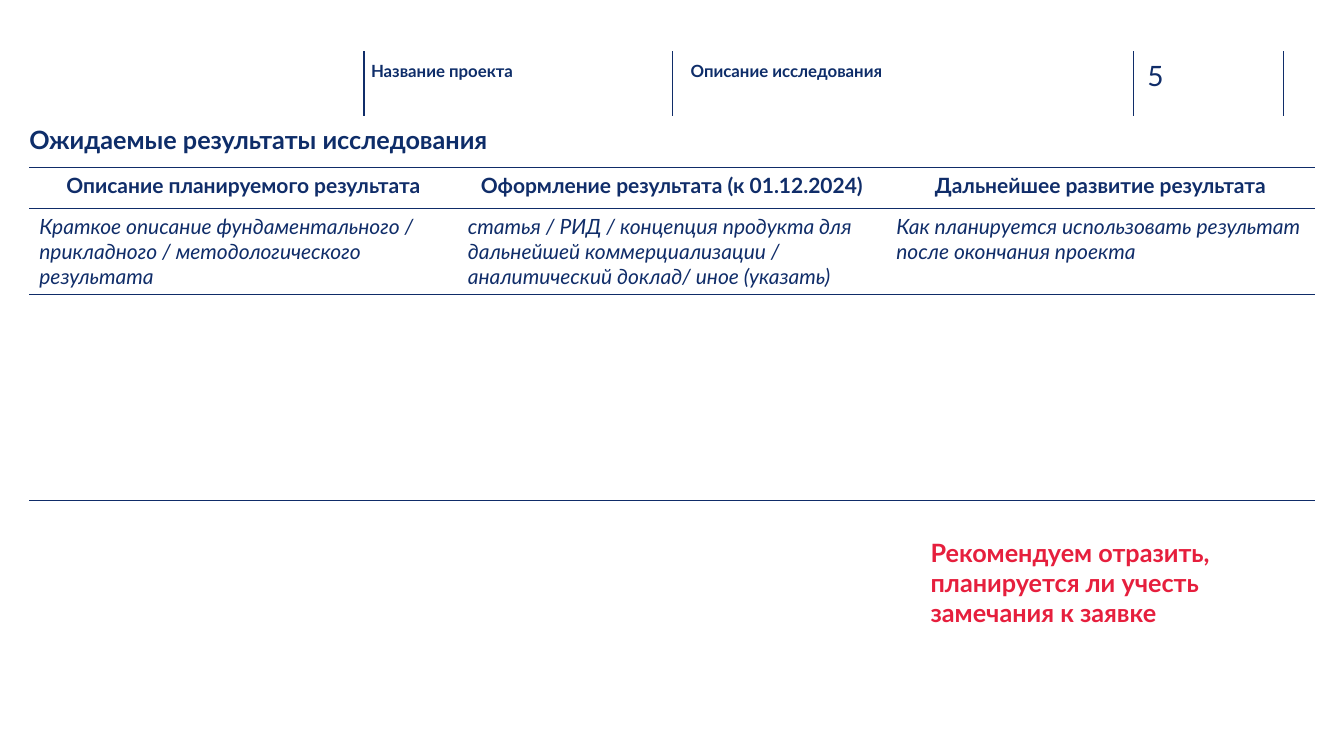
from dataclasses import dataclass

import pptx
import pptx.dml.color
import pptx.enum.shapes
import pptx.enum.text
import pptx.oxml
import pptx.oxml.ns
import pptx.slide
import pptx.table
import pptx.util
from pptx.util import Inches

FONT = "Lato"
NAVY = "102D69"
HEADING_NAVY = "0E2D69"
BORDER_NAVY = "0F2C68"
RED = "E61F3D"
NO_STYLE_NO_GRID = "{2D5ABB26-0587-4C30-8999-92F81FD0307C}"


@dataclass
class Label:
    text: str
    left: float
    top: float
    width: float
    height: float
    size: int
    color: str = HEADING_NAVY
    bold: bool = True
    bottom_inset: float = 0


@dataclass
class ResultColumn:
    heading: str
    hint: str


DIVIDERS = [3.61, 6.67, 11.24, 12.73]
DIVIDER_TOP, DIVIDER_BOTTOM = 0.51, 1.15

LABELS = [
    Label("5", 11.38, 0.58, 0.73, 0.34, 20, NAVY, bold=False),
    Label("Название проекта", 3.68, 0.6, 2.89, 0.45, 12),
    Label("Описание исследования", 6.85, 0.6, 3.84, 0.45, 12),
    Label("Ожидаемые результаты исследования", 0.29, 1.23, 12.45, 0.42, 18,
          bottom_inset=0.05),
    Label("Рекомендуем отразить, планируется ли учесть замечания к заявке",
          9.23, 5.33, 3.81, 0.89, 18, RED, bottom_inset=0.05),
]

COLUMNS = [
    ResultColumn("Описание планируемого результата",
                 "Краткое описание фундаментального / прикладного / "
                 "методологического результата"),
    ResultColumn("Оформление результата (к 01.12.2024)",
                 "статья / РИД / концепция продукта для дальнейшей "
                 "коммерциализации / аналитический доклад/ иное (указать)"),
    ResultColumn("Дальнейшее развитие результата",
                 "Как планируется использовать результат после окончания проекта"),
]
ROW_COUNT = 7
ROW_HEIGHT = 0.41
COLUMN_WIDTH = 4.25
# Sides of the cells that carry a rule, by row
RULED_SIDES = {0: ["T", "B"], 1: ["T"], ROW_COUNT - 1: ["B"]}


def rgb(color: str) -> pptx.dml.color.RGBColor:
    return pptx.dml.color.RGBColor.from_string(color)


def set_font(paragraph, size: int, color: str, bold: bool = False,
             italic: bool = False) -> None:
    font = paragraph.font
    font.name = FONT
    font.size = pptx.util.Pt(size)
    font.bold = bold
    font.italic = italic
    font.color.rgb = rgb(color)


def add_divider(slide: pptx.slide.Slide, x: float) -> None:
    connector = slide.shapes.add_connector(
        pptx.enum.shapes.MSO_CONNECTOR.STRAIGHT,
        Inches(x), Inches(DIVIDER_TOP), Inches(x), Inches(DIVIDER_BOTTOM))
    connector.line.color.rgb = rgb(NAVY)
    connector.line.width = pptx.util.Pt(1)
    connector._element.spPr.append(pptx.oxml.parse_xml(
        f"<a:effectLst {pptx.oxml.ns.nsdecls('a')}/>"))


def add_label(slide: pptx.slide.Slide, label: Label) -> None:
    shape = slide.shapes.add_textbox(
        Inches(label.left), Inches(label.top),
        Inches(label.width), Inches(label.height))
    frame = shape.text_frame
    frame.word_wrap = True
    frame.margin_left = frame.margin_top = frame.margin_right = 0
    frame.margin_bottom = Inches(label.bottom_inset)
    paragraph = frame.paragraphs[0]
    paragraph.text = label.text
    set_font(paragraph, label.size, label.color, label.bold)


def add_border(cell: pptx.table._Cell, side: str) -> None:
    cell._tc.get_or_add_tcPr().append(pptx.oxml.parse_xml(
        f"<a:ln{side} {pptx.oxml.ns.nsdecls('a')} w='{pptx.util.Pt(1)}'>"
        f"<a:solidFill><a:srgbClr val='{BORDER_NAVY}'/></a:solidFill>"
        f"</a:ln{side}>"))


def add_results_table(slide: pptx.slide.Slide) -> None:
    table = slide.shapes.add_table(
        ROW_COUNT, len(COLUMNS), Inches(0.29), Inches(1.66),
        Inches(COLUMN_WIDTH * len(COLUMNS)), Inches(ROW_HEIGHT * ROW_COUNT)).table
    table.first_row = table.horz_banding = False
    style = table._tbl.tblPr.find(pptx.oxml.ns.qn("a:tableStyleId"))
    style.text = NO_STYLE_NO_GRID

    for row in table.rows:
        row.height = Inches(ROW_HEIGHT)
    for column_index, column in enumerate(COLUMNS):
        table.columns[column_index].width = Inches(COLUMN_WIDTH)
        texts = [column.heading, column.hint]
        for row_index in range(ROW_COUNT):
            cell = table.cell(row_index, column_index)
            for side in RULED_SIDES.get(row_index, []):
                add_border(cell, side)
            cell.fill.background()
            if row_index < len(texts):
                is_heading = row_index == 0
                paragraph = cell.text_frame.paragraphs[0]
                paragraph.text = texts[row_index]
                if is_heading:
                    paragraph.alignment = pptx.enum.text.PP_ALIGN.CENTER
                set_font(paragraph, 15, NAVY, bold=is_heading,
                         italic=not is_heading)


def main() -> None:
    presentation = pptx.Presentation()
    presentation.slide_width = Inches(13.33)
    presentation.slide_height = Inches(7.5)
    slide = presentation.slides.add_slide(presentation.slide_layouts[6])

    # Header dividers
    for x in DIVIDERS:
        add_divider(slide, x)

    # Header texts, title and recommendation
    for label in LABELS:
        add_label(slide, label)

    # Expected results
    add_results_table(slide)

    presentation.save("out.pptx")


if __name__ == "__main__":
    main()
